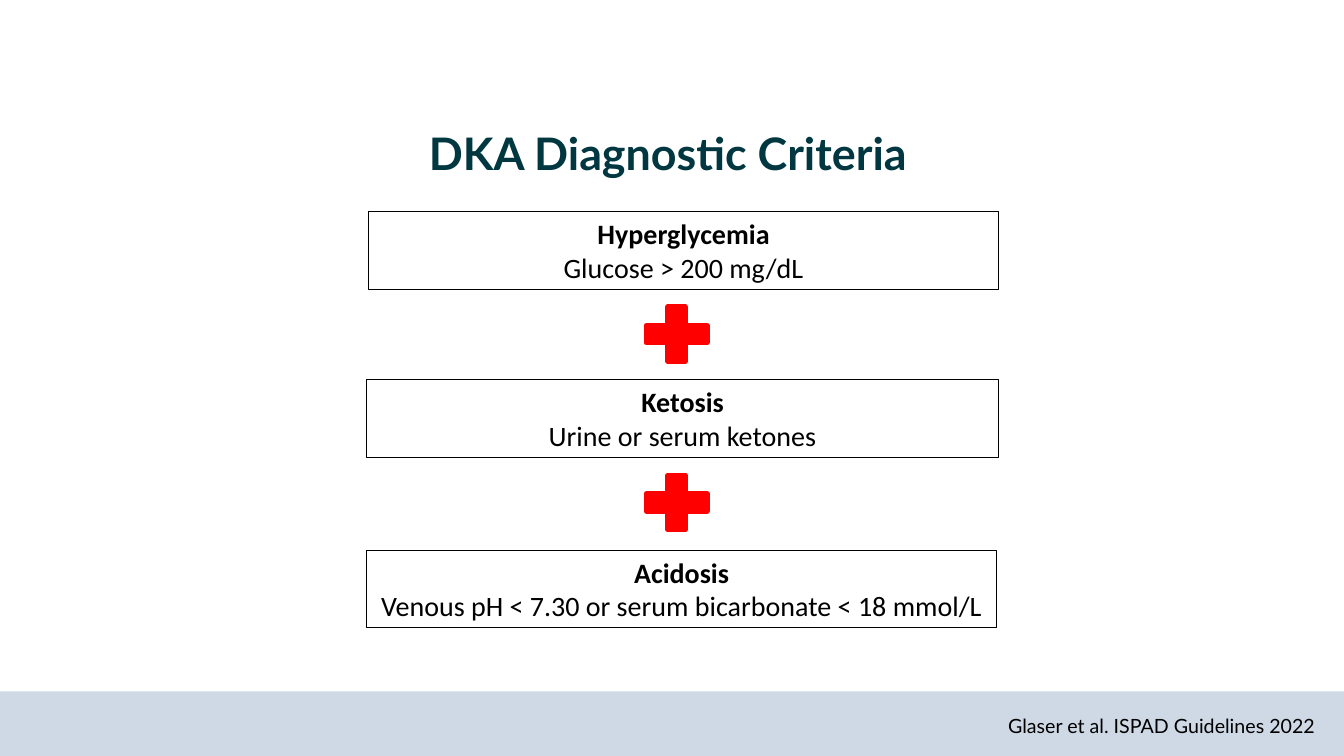
import pptx
import pptx.util
import pptx.dml.color
import pptx.enum.shapes
import pptx.enum.text

Inches = pptx.util.Inches
Pt = pptx.util.Pt
Kind = pptx.enum.shapes.MSO_SHAPE
Align = pptx.enum.text.PP_ALIGN
Anchor = pptx.enum.text.MSO_ANCHOR
Fit = pptx.enum.text.MSO_AUTO_SIZE

theme = {
    "band": "CED9E5", "title": "003741", "text": "000000", "plus": "FF0000",
    "head": 32, "body": 20, "note": 14,
    "main": "Lato", "box": "Calibri",
}


def color(name):
    return pptx.dml.color.RGBColor.from_string(theme[name])


def write(par, text, font, size, ink, bold, align):
    par.alignment = align
    run = par.add_run()
    run.text = text
    style = {"name": theme[font], "size": Pt(theme[size]), "bold": bold}
    for key, value in style.items():
        setattr(run.font, key, value)
    run.font.color.rgb = color(ink)


deck = pptx.Presentation()
deck.slide_width = Inches(13.33)
deck.slide_height = Inches(7.5)
slide = deck.slides.add_slide(deck.slide_layouts[5])
shapes = slide.shapes

band = shapes.add_shape(Kind.RECTANGLE, 0, Inches(6.86), deck.slide_width, Inches(0.64))
band.shadow.inherit = False
band.fill.solid()
band.fill.fore_color.rgb = color("band")
band.line.fill.background()

title = shapes.title
place = {"left": 0.74, "top": 1.12, "width": 11.77, "height": 0.86}
for key, value in place.items():
    setattr(title, key, Inches(value))
title.text_frame.vertical_anchor = Anchor.MIDDLE
title.text_frame.auto_size = Fit.NONE
head = title.text_frame.paragraphs[0]
head.line_spacing = 0.9
write(head, "DKA Diagnostic Criteria", "main", "head", "title", True, Align.CENTER)

tests = [
    (3.66, 2.1, 6.24, "Hyperglycemia", "Glucose > 200 mg/dL"),
    (3.64, 3.77, 6.26, "Ketosis", "Urine or serum ketones"),
    (3.64, 5.46, 6.24, "Acidosis", "Venous pH < 7.30 or serum bicarbonate < 18 mmol/L"),
]
for left, top, width, name, rule in tests:
    box = shapes.add_shape(
        Kind.RECTANGLE, Inches(left), Inches(top), Inches(width), Inches(0.77))
    box.shadow.inherit = False
    box.fill.background()
    box.line.color.rgb = color("text")
    box.line.width = Pt(0.75)
    frame = box.text_frame
    frame.word_wrap = True
    frame.auto_size = Fit.SHAPE_TO_FIT_TEXT
    frame.vertical_anchor = Anchor.TOP
    write(frame.paragraphs[0], name, "box", "body", "text", True, Align.CENTER)
    write(frame.add_paragraph(), rule, "box", "body", "text", False, Align.CENTER)

for top in (2.95, 4.62):
    plus = shapes.add_shape(
        Kind.MATH_PLUS, Inches(6.3), Inches(top), Inches(0.82), Inches(0.73))
    plus.shadow.inherit = False
    plus.adjustments[0] = 0.235
    plus.fill.solid()
    plus.fill.fore_color.rgb = color("plus")
    plus.line.color.rgb = color("plus")
    plus.line.width = Pt(3.75)

cite = shapes.add_textbox(Inches(9.9), Inches(7.03), Inches(3.44), Inches(0.34))
cite.text_frame.word_wrap = True
cite.text_frame.auto_size = Fit.SHAPE_TO_FIT_TEXT
write(cite.text_frame.paragraphs[0], "Glaser et al. ISPAD Guidelines 2022",
      "main", "note", "text", False, Align.LEFT)

deck.save("out.pptx")
